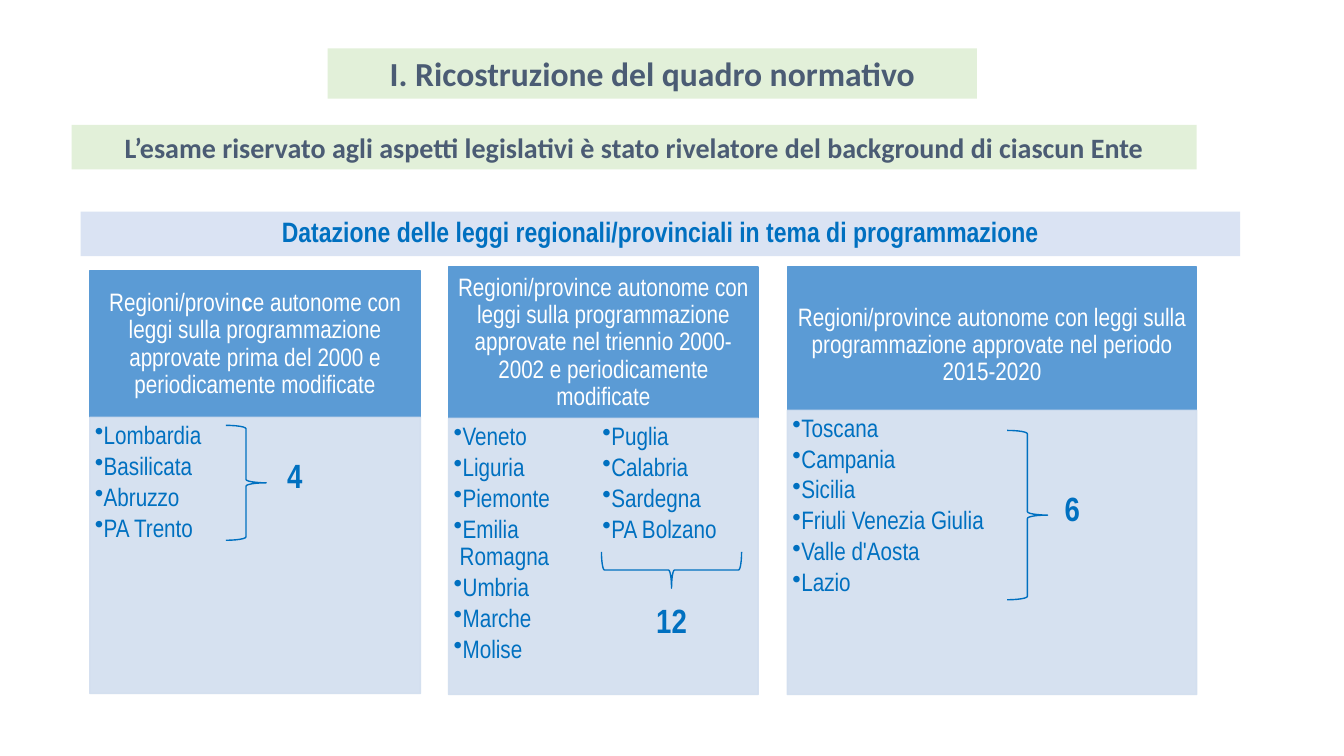
from lxml.etree import SubElement
from pptx import Presentation
from pptx.dml.color import RGBColor
from pptx.enum.shapes import MSO_SHAPE as Shape
from pptx.enum.text import MSO_ANCHOR as Anchor, PP_ALIGN as Align
from pptx.oxml.ns import qn
from pptx.util import Inches, Pt

NARROW = "Arial Narrow"
BLUE, HEADER, BODY = "0070C0", "5B9BD5", "D2DEEF"
SLATE, GREEN, PALE = "4B5C74", "E2F0D9", "DAE3F3"

# Box is left, top, width, height; brace and count are placed relative to the body
COLUMNS = [
    dict(box=(0.89, 2.69, 3.28, 4.19), header_height=1.45,
         heading=[("Regioni/provin", False), ("c", True),
                  ("e autonome con leggi sulla programmazione approvate "
                   "prima del 2000 e periodicamente modificate", False)],
         regions=["Lombardia", "Basilicata", "Abruzzo", "PA Trento"],
         brace=(1.35, 0.08, 0.4, 1.14), count="4", count_at=(1.86, 0.32)),
    dict(box=(4.45, 2.65, 3.07, 4.24), header_height=1.5,
         heading="Regioni/province autonome con leggi sulla programmazione "
                 "approvate nel triennio 2000-2002 e periodicamente modificate",
         regions=["Veneto", "Liguria", "Piemonte", "Emilia Romagna", "Umbria", "Marche",
                  "Molise", "Puglia", "Calabria", "Sardegna", "PA Bolzano"],
         text_columns=2, brace=(2.03, 0.81, 0.36, 1.39), turn=90,
         count="12", count_at=(1.96, 1.75)),
    dict(box=(7.81, 2.65, 4.06, 4.24), header_height=1.42, heading_drop=0.13,
         heading="Regioni/province autonome con leggi sulla programmazione "
                 "approvate nel periodo 2015-2020",
         regions=["Toscana", "Campania", "Sicilia", "Friuli Venezia Giulia",
                  "Valle d'Aosta", "Lazio"],
         brace=(2.18, 0.2, 0.4, 1.68), count="6", count_at=(2.65, 0.72)),
]


def color(hex_code):
    return RGBColor.from_string(hex_code)


def write(shape, paragraphs, size=18, font=NARROW, ink=BLUE, bold=False, align=Align.CENTER,
          anchor=Anchor.MIDDLE, insets=(0.1, 0.05, 0.1, 0.05), spacing=None, after=0,
          bullet=False, wrap=True):
    """Fill a shape with paragraphs, each a string or a list of (text, bold) runs."""
    frame = shape.text_frame
    frame.word_wrap = wrap
    frame.vertical_anchor = anchor
    (frame.margin_left, frame.margin_top,
     frame.margin_right, frame.margin_bottom) = map(Inches, insets)
    for index, content in enumerate(paragraphs):
        paragraph = frame.add_paragraph() if index else frame.paragraphs[0]
        paragraph.alignment = align
        paragraph.line_spacing = spacing
        paragraph.space_before, paragraph.space_after = Pt(0), Pt(after)
        if bullet:
            props = paragraph._p.get_or_add_pPr()
            props.set("marL", str(Inches(0.06)))
            props.set("indent", str(-Inches(0.06)))
            SubElement(props, qn("a:buChar"), char="•")
        for text, strong in [(content, bold)] if isinstance(content, str) else content:
            run = paragraph.add_run()
            run.text = text
            run.font.size, run.font.name, run.font.bold = Pt(size), font, strong
            run.font.color.rgb = color(ink)


def add_block(slide, box, kind=Shape.RECTANGLE, fill=None, line=None, opacity=None):
    block = slide.shapes.add_shape(kind, *map(Inches, box))
    block.shadow.inherit = False
    for paint, hex_code in ((block.fill, fill), (block.line.fill, line)):
        if hex_code is None:
            paint.background()
            continue
        paint.solid()
        paint.fore_color.rgb = color(hex_code)
    if line:
        block.line.width = Pt(1)
    if opacity:
        for shade in block._element.spPr.iter(qn("a:srgbClr")):
            SubElement(shade, qn("a:alpha"), val=str(opacity * 1000))
    return block


def add_banner(slide, box, text, size):
    banner = add_block(slide, box, fill=GREEN)
    write(banner, [text], size=size, font="Calibri", ink=SLATE, bold=True)


def add_title(slide, box, text):
    title = slide.shapes.title
    title.left, title.top, title.width, title.height = map(Inches, box)
    title.fill.solid()
    title.fill.fore_color.rgb = color(PALE)
    write(title, [text], size=20, bold=True, spacing=0.9)


def add_column(slide, box, header_height, heading, regions, brace, count, count_at,
               text_columns=1, turn=0, heading_drop=0):
    left, top, width, height = box
    body_top = top + header_height

    # Heading
    header = add_block(slide, (left, top, width, header_height), fill=HEADER, line=HEADER)
    write(header, [heading], ink="FFFFFF", spacing=0.9,
          insets=(0.07, 0.04 + heading_drop, 0.07, 0.04))

    # List of regions
    body = add_block(slide, (left, body_top, width, height - header_height),
                     fill=BODY, line=BODY, opacity=90)
    write(body, regions, align=Align.LEFT, anchor=Anchor.TOP, spacing=0.9, after=2.7,
          bullet=True, insets=(0.05, 0.05, 0.07, 0.08))
    if text_columns > 1:
        body.text_frame._txBody.bodyPr.set("numCol", str(text_columns))

    # Brace and number of regions
    dx, dy, brace_width, brace_height = brace
    bracket = add_block(slide, (left + dx, body_top + dy, brace_width, brace_height),
                        kind=Shape.RIGHT_BRACE, line=BLUE)
    bracket.rotation = turn
    dx, dy = count_at
    total = slide.shapes.add_textbox(*map(Inches, (left + dx, body_top + dy,
                                                   0.2 + 0.16 * len(count), 0.5)))
    write(total, [count], size=24, bold=True, align=Align.LEFT, anchor=Anchor.TOP, wrap=False)


def main():
    deck = Presentation()
    deck.slide_width, deck.slide_height = Inches(13.33), Inches(7.5)
    slide = deck.slides.add_slide(deck.slide_layouts[5])

    add_banner(slide, (3.25, 0.48, 6.44, 0.5), "I. Ricostruzione del quadro normativo", 24)
    add_banner(slide, (0.71, 1.24, 11.16, 0.44),
               "L’esame riservato agli aspetti legislativi è stato rivelatore "
               "del background di ciascun Ente", 20)
    add_title(slide, (0.8, 2.1, 11.5, 0.44),
              "Datazione delle leggi regionali/provinciali in tema di programmazione")
    for column in COLUMNS:
        add_column(slide, **column)

    deck.save("out.pptx")


if __name__ == "__main__":
    main()
